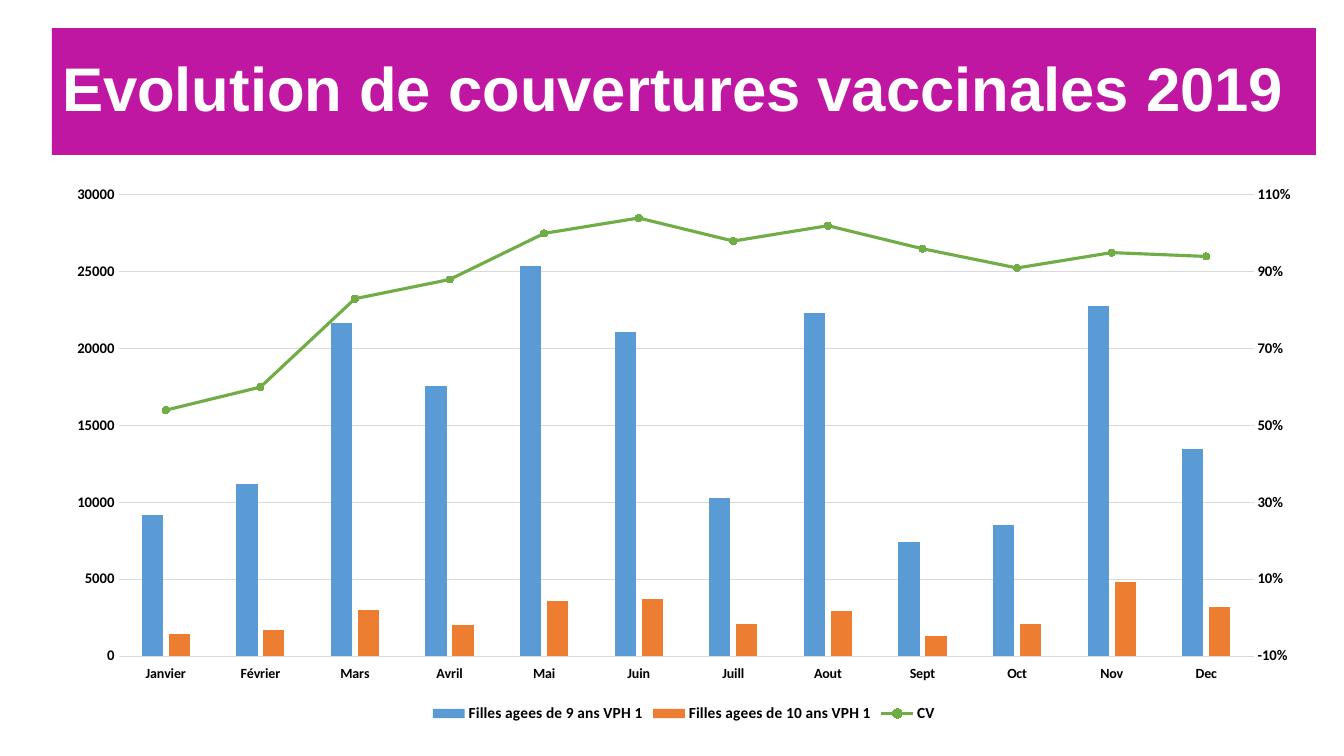
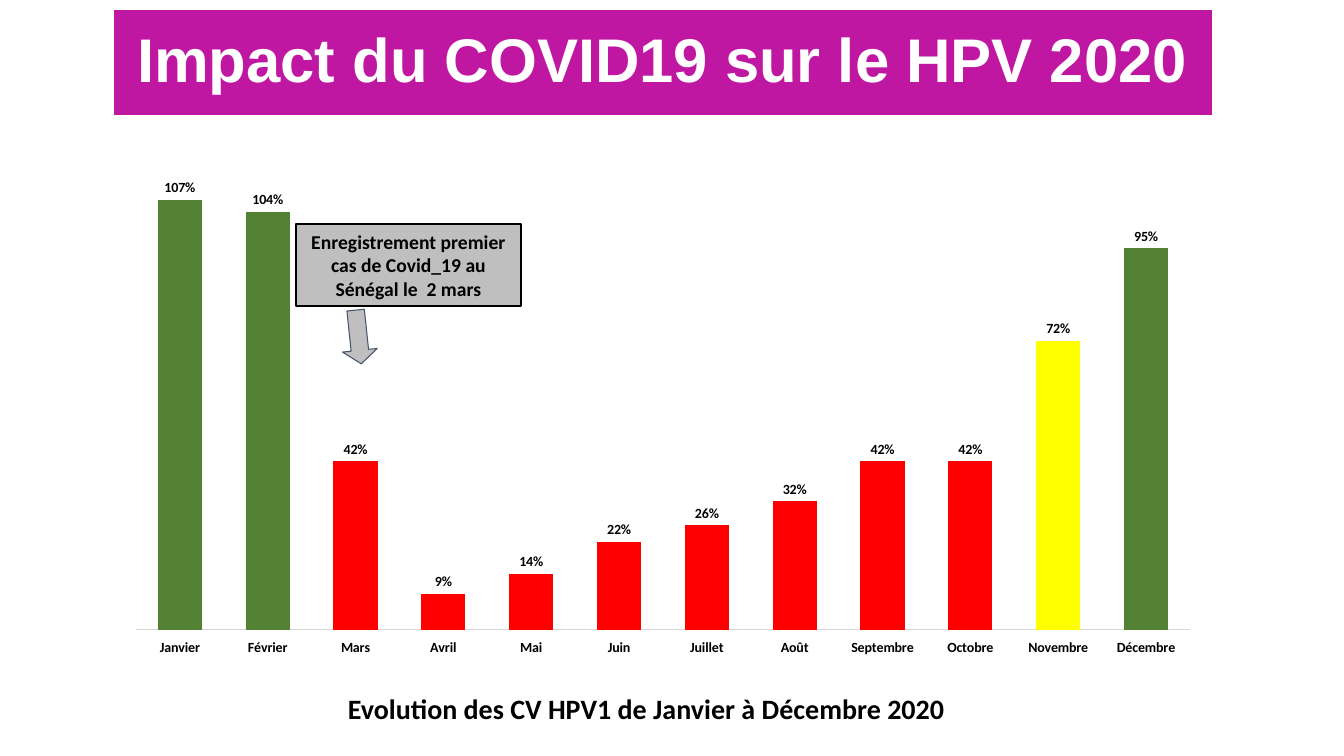
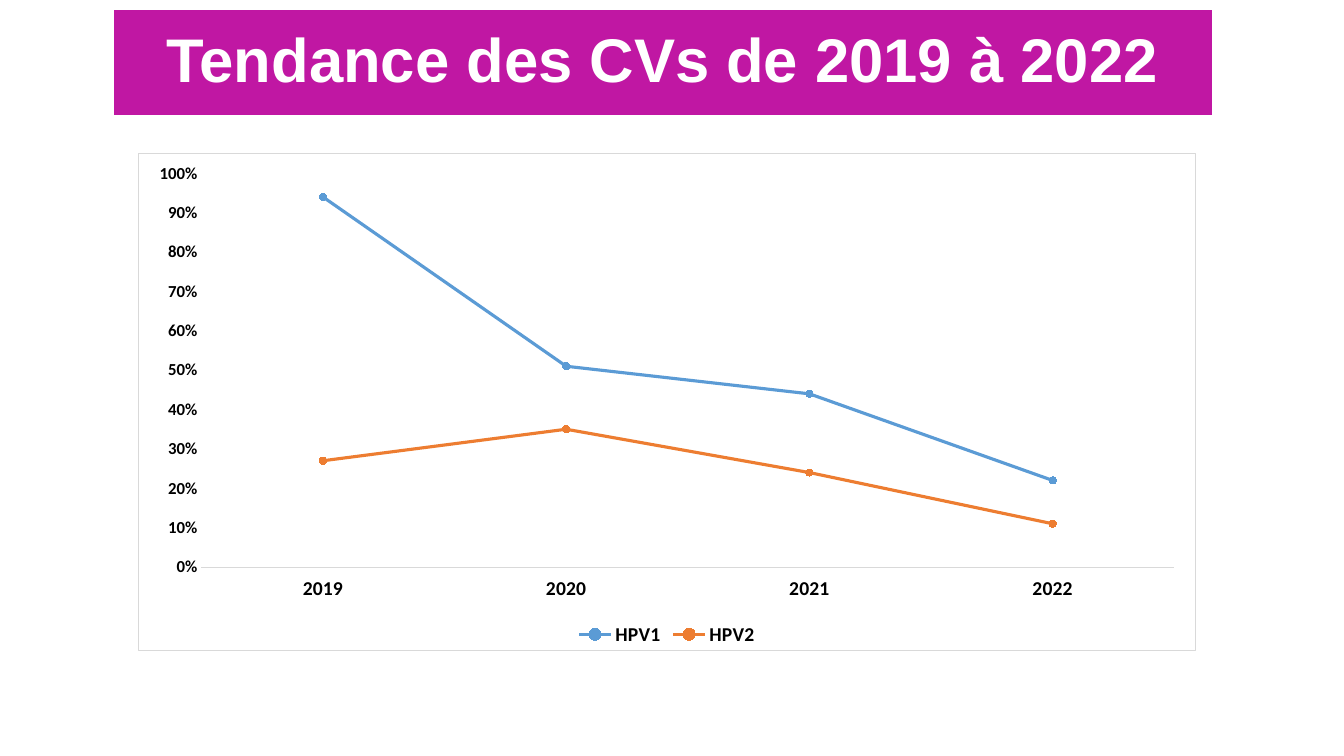
from copy import deepcopy
from dataclasses import dataclass

from pptx import Presentation
from pptx.chart.axis import ValueAxis
from pptx.chart.data import CategoryChartData
from pptx.dml.color import RGBColor
from pptx.enum.chart import (XL_CHART_TYPE, XL_LABEL_POSITION, XL_LEGEND_POSITION,
                             XL_MARKER_STYLE, XL_TICK_LABEL_POSITION, XL_TICK_MARK)
from pptx.enum.shapes import MSO_SHAPE
from pptx.enum.text import MSO_ANCHOR, MSO_AUTO_SIZE, PP_ALIGN
from pptx.oxml import parse_xml
from pptx.oxml.ns import nsdecls, qn
from pptx.util import Emu, Pt

BARS, LINES = XL_CHART_TYPE.COLUMN_CLUSTERED, XL_CHART_TYPE.LINE_MARKERS
BOTTOM, OUTSIDE = XL_LEGEND_POSITION.BOTTOM, XL_LABEL_POSITION.OUTSIDE_END
CIRCLE, NO_TICK = XL_MARKER_STYLE.CIRCLE, XL_TICK_MARK.NONE
LOW = XL_TICK_LABEL_POSITION.LOW
RECT, ARROW = MSO_SHAPE.RECTANGLE, MSO_SHAPE.DOWN_ARROW
MIDDLE, TOP, NO_FIT = MSO_ANCHOR.MIDDLE, MSO_ANCHOR.TOP, MSO_AUTO_SIZE.NONE
LEFT, CENTER = PP_ALIGN.LEFT, PP_ALIGN.CENTER

SCALE = 914400 / 100.8
WIDE, HIGH = 1344, 756
TITLE_ONLY = 5
# Axis parts that may be absent, each with the part it follows
AFTER = {"delete": "scaling", "axPos": "delete", "crosses": "crossAx"}


@dataclass(frozen=True)
class Theme:
    band: str = "C017A3"
    white: str = "FFFFFF"
    black: str = "000000"
    grid: str = "D9D9D9"
    note: str = "BFBFBF"
    edge: str = "44546A"
    blue: str = "5B9BD5"
    orange: str = "ED7D31"
    green: str = "70AD47"
    good: str = "548235"
    fair: str = "FFFF00"
    poor: str = "FF0000"
    head: str = "Arial"
    body: str = "Calibri"
    title: float = 44
    caption: float = 20
    text: float = 14
    label: float = 10
    scale: float = 10.5
    key: float = 11
    large: float = 12


T = Theme()


# Basic helpers
def px(n):
    return Emu(round(n * SCALE))


def place(box):
    return [px(n) for n in box]


def apply(thing, **values):
    for name, value in values.items():
        setattr(thing, name, value)


def paint(fill, color):
    fill.solid()
    fill.fore_color.rgb = RGBColor.from_string(color)


def stroke(line, color, width):
    paint(line.fill, color)
    line.width = Pt(width)


def style(font, size, color=T.black, name=T.body, bold=True):
    apply(font, size=Pt(size), name=name, bold=bold)
    font.color.rgb = RGBColor.from_string(color)


def write(shape, text, size, align, anchor=MIDDLE, **look):
    frame = shape.text_frame
    apply(frame, text=text, word_wrap=True, auto_size=NO_FIT, vertical_anchor=anchor)
    para = frame.paragraphs[0]
    para.alignment = align
    style(para.runs[0].font, size, **look)
    return para


# Title band
def start(deck, title, box=(114, 10, 1098, 105), align=CENTER):
    slide = deck.slides.add_slide(deck.slide_layouts[TITLE_ONLY])
    band = slide.shapes.title
    apply(band, **dict(zip(("left", "top", "width", "height"), place(box))))
    paint(band.fill, T.band)
    para = write(band, title, T.title, align, color=T.white, name=T.head)
    para.line_spacing = 0.9
    return slide


# Chart parts
def plot(slide, box, kind, cats, rows):
    data = CategoryChartData()
    data.categories = cats
    for name, form, vals in rows:
        data.add_series(name, vals, form)
    chart = slide.shapes.add_chart(kind, *place(box), data).chart
    chart.has_title = False
    style(chart.font, T.label, bold=False)
    chart.plots[0].vary_by_categories = False
    return chart


def axes(chart, top, step, form, cat_size=T.label, val_size=T.scale, grid=False):
    cat, val = chart.category_axis, chart.value_axis
    for axis, size in ((cat, cat_size), (val, val_size)):
        apply(axis, major_tick_mark=NO_TICK, minor_tick_mark=NO_TICK)
        style(axis.tick_labels.font, size)
    cat.tick_label_position = LOW
    stroke(cat.format.line, T.grid, 0.75)
    apply(val, minimum_scale=0, maximum_scale=top, major_unit=step,
          has_major_gridlines=grid)
    val.format.line.fill.background()
    apply(val.tick_labels, number_format=form, number_format_is_linked=False)
    if grid:
        stroke(val.major_gridlines.format.line, T.grid, 0.75)


def legend(chart, size):
    chart.has_legend = True
    apply(chart.legend, position=BOTTOM, include_in_layout=False)
    style(chart.legend.font, size)


def trace(series, color):
    series.smooth = False
    stroke(series.format.line, color, 2.25)
    apply(series.marker, style=CIRCLE, size=5)
    paint(series.marker.format.fill, color)
    stroke(series.marker.format.line, color, 0.75)


def area(chart):
    return chart.element.find(".//" + qn("c:plotArea"))


def put(axis, **values):
    for tag, value in values.items():
        part = axis.find(qn("c:" + tag))
        if part is None:
            part = parse_xml(f'<c:{tag} {nsdecls("c")}/>')
            axis.find(qn("c:" + AFTER[tag])).addnext(part)
        part.set("val", value)


def split(chart, low, top, step, form):
    """Move the last bar series to a line on a right-hand axis."""
    bars = area(chart).find(qn("c:barChart"))
    line = parse_xml(
        f'<c:lineChart {nsdecls("c")}><c:grouping val="standard"/>'
        '<c:varyColors val="0"/><c:marker val="1"/>'
        '<c:axId val="501"/><c:axId val="502"/></c:lineChart>')
    ser = bars.findall(qn("c:ser"))[-1]
    for part in ser.findall(qn("c:invertIfNegative")):
        ser.remove(part)
    line.insert(2, ser)
    bars.addnext(line)
    left = area(chart).find(qn("c:valAx"))
    cat = deepcopy(area(chart).find(qn("c:catAx")))
    val = deepcopy(left)
    put(cat, axId="501", crossAx="502", delete="1")
    put(val, axId="502", crossAx="501", delete="0", axPos="r", crosses="max")
    left.addnext(val)
    val.addnext(cat)
    right = ValueAxis(val)
    apply(right, has_major_gridlines=False, minimum_scale=low,
          maximum_scale=top, major_unit=step)
    right.tick_labels.number_format = form


def inset(chart, x, y, w, h):
    body = area(chart)
    for old in body.findall(qn("c:layout")):
        body.remove(old)
    spots = "".join(f'<c:{tag} val="{n}"/>' for tag, n in zip("xywh", (x, y, w, h)))
    body.insert(0, parse_xml(
        f'<c:layout {nsdecls("c")}><c:manualLayout><c:layoutTarget val="inner"/>'
        f'<c:xMode val="edge"/><c:yMode val="edge"/>{spots}'
        '</c:manualLayout></c:layout>'))


def frame(chart):
    def solid(color):
        return f'<a:solidFill><a:srgbClr val="{color}"/></a:solidFill>'
    chart.element.find(qn("c:txPr")).addprevious(parse_xml(
        f'<c:spPr {nsdecls("c", "a")}>{solid(T.white)}'
        f'<a:ln w="{int(Pt(0.75))}">{solid(T.grid)}</a:ln></c:spPr>'))


# Callout: note box with an arrow below it
def callout(slide, text, x, y, w, h):
    note = slide.shapes.add_shape(RECT, *place((x, y, w, h)))
    arrow = slide.shapes.add_shape(ARROW, *place((x + 45, y + h + 4, 35, 54)))
    arrow.rotation = 354
    arrow.adjustments[1] = 0.39
    for shape, color, width in ((note, T.black, 1), (arrow, T.edge, 0.75)):
        shape.shadow.inherit = False
        paint(shape.fill, T.note)
        stroke(shape.line, color, width)
    write(note, text, T.text, CENTER)


# Slides
def cover(deck):
    slide = start(deck, "Evolution de couvertures vaccinales 2019",
                  (52, 28, 1264, 127), LEFT)
    cats = ["Janvier", "Février", "Mars", "Avril", "Mai", "Juin",
            "Juill", "Aout", "Sept", "Oct", "Nov", "Dec"]
    rows = [
        ("Filles agees de 9 ans VPH 1", "General",
         [9200, 11200, 21700, 17600, 25400, 21100,
          10300, 22300, 7400, 8500, 22800, 13500]),
        ("Filles agees de 10 ans VPH 1", "General",
         [1400, 1700, 3000, 2000, 3600, 3700,
          2100, 2900, 1300, 2100, 4800, 3200]),
        ("CV", "0%", [0.54, 0.6, 0.83, 0.88, 1, 1.04,
                      0.98, 1.02, 0.96, 0.91, 0.95, 0.94]),
    ]
    chart = plot(slide, (52, 175, 1264, 552), BARS, cats, rows)
    axes(chart, 30000, 5000, "General", grid=True)
    split(chart, -0.1, 1.1, 0.2, "0%")
    bars, line = chart.plots
    apply(bars, gap_width=219, overlap=-27)
    for series, color in zip(bars.series, (T.blue, T.orange)):
        paint(series.format.fill, color)
    trace(line.series[0], T.green)
    legend(chart, T.key)


def impact(deck):
    slide = start(deck, "Impact du COVID19 sur le HPV 2020")
    cats = ["Janvier", "Février", "Mars", "Avril", "Mai", "Juin", "Juillet",
            "Août", "Septembre", "Octobre", "Novembre", "Décembre"]
    vals = [1.07, 1.04, 0.42, 0.09, 0.14, 0.22,
            0.26, 0.32, 0.42, 0.42, 0.72, 0.95]
    chart = plot(slide, (114, 126, 1098, 542), BARS, cats,
                 [("Series 1", "0%", vals)])
    axes(chart, 1.2, 0.2, "0%")
    chart.value_axis.visible = False
    chart.has_legend = False
    inset(chart, 0.02, 0.04, 0.96, 0.89)
    bars = chart.plots[0]
    apply(bars, gap_width=99, overlap=-27, has_data_labels=True)
    series = bars.series[0]
    paint(series.format.fill, T.blue)
    for i, val in enumerate(vals):
        color = T.good if val >= 0.9 else T.fair if val >= 0.5 else T.poor
        paint(series.points[i].format.fill, color)
    apply(bars.data_labels, show_value=True, position=OUTSIDE,
          number_format="0%", number_format_is_linked=False)
    style(bars.data_labels.font, T.label)
    callout(slide, "Enregistrement premier cas de Covid_19 au Sénégal le  2 mars",
            296, 224, 225, 82)
    caption = slide.shapes.add_textbox(*place((338, 687, 649, 44)))
    write(caption, "Evolution des CV HPV1 de Janvier à Décembre 2020",
          T.caption, LEFT, TOP)


def trend(deck):
    slide = start(deck, "Tendance des CVs de 2019 à 2022")
    rows = [("HPV1", "0%", [0.94, 0.51, 0.44, 0.22]),
            ("HPV2", "0%", [0.27, 0.35, 0.24, 0.11])]
    chart = plot(slide, (138, 153, 1058, 498), LINES,
                 ["2019", "2020", "2021", "2022"], rows)
    axes(chart, 1, 0.1, "0%", T.text, T.large)
    for series, color in zip(chart.plots[0].series, (T.blue, T.orange)):
        trace(series, color)
    legend(chart, T.text)
    frame(chart)


def main():
    deck = Presentation()
    apply(deck, slide_width=px(WIDE), slide_height=px(HIGH))
    for build in (cover, impact, trend):
        build(deck)
    deck.save("out.pptx")


if __name__ == "__main__":
    main()
